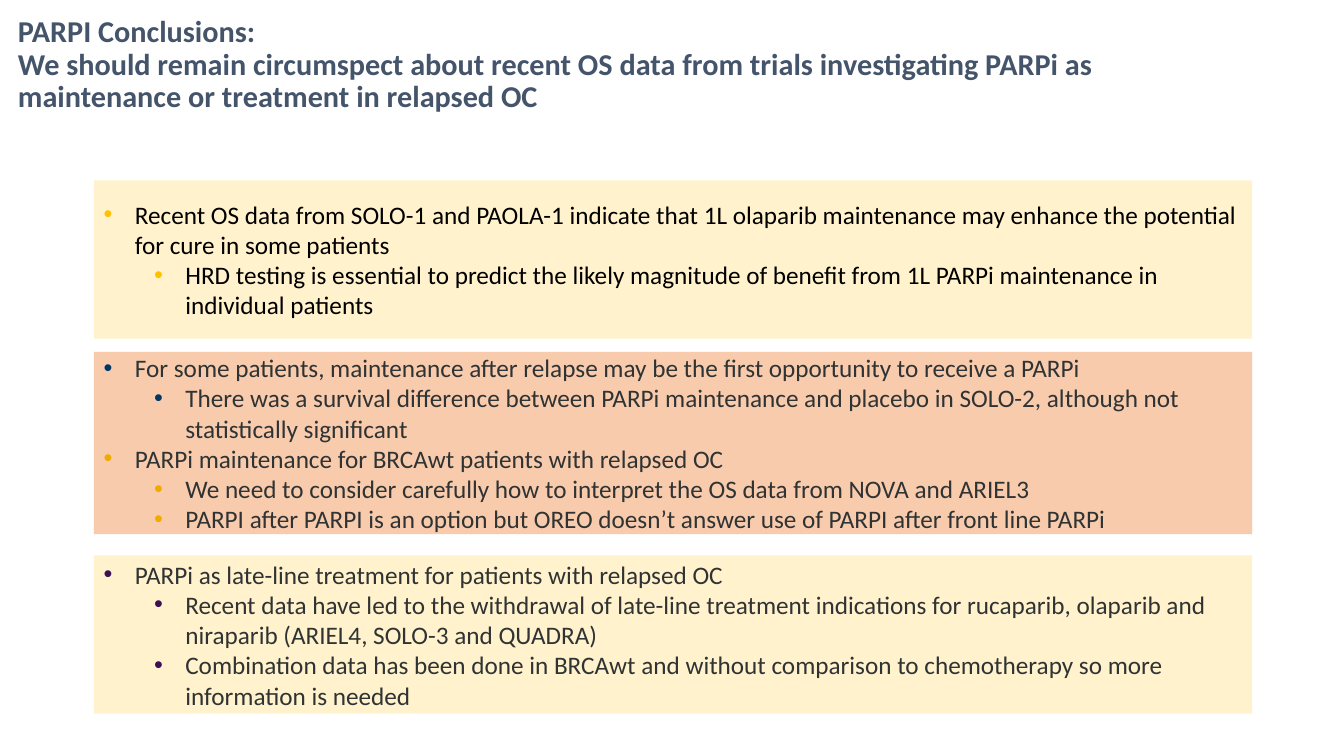
import lxml.etree
import pptx
import pptx.dml.color
import pptx.enum.shapes
import pptx.enum.text
import pptx.oxml.ns
import pptx.util
from pptx.util import Inches

TITLE = (
    "PARPI Conclusions:\v"
    "We should remain circumspect about recent OS data from trials investigating "
    "PARPi as maintenance or treatment in relapsed OC"
)

AMBER, PEACH = "FFC000", "F8CBAD"
NAVY, GOLD, PURPLE = "003865", "F0AB00", "3C1053"
BLACK, CHARCOAL, SLATE = "000000", "2F3333", "44546A"

# Each bullet is (level, bullet colour, text).
FIRST_LINE = [
    (0, AMBER, "Recent OS data from SOLO-1 and PAOLA-1 indicate that 1L olaparib "
               "maintenance may enhance the potential for cure in some patients"),
    (1, AMBER, "HRD testing is essential to predict the likely magnitude of benefit "
               "from 1L PARPi maintenance in individual patients"),
]
RELAPSE = [
    (0, NAVY, "For some patients, maintenance after relapse may be the first "
              "opportunity to receive a PARPi"),
    (1, NAVY, "There was a survival difference between PARPi maintenance and placebo "
              "in SOLO-2, although not statistically significant"),
    (0, GOLD, "PARPi maintenance for BRCAwt patients with relapsed OC"),
    (1, GOLD, "We need to consider carefully how to interpret the OS data from NOVA "
              "and ARIEL3"),
    (1, GOLD, "PARPI after PARPI is an option but OREO doesn’t answer use of PARPI "
              "after front line PARPi"),
]
LATE_LINE = [
    (0, PURPLE, "PARPi as late-line treatment for patients with relapsed OC"),
    (1, PURPLE, "Recent data have led to the withdrawal of late-line treatment "
                "indications for rucaparib, olaparib and niraparib "
                "(ARIEL4, SOLO-3 and QUADRA)"),
    (1, PURPLE, "Combination data has been done in BRCAwt and without comparison to "
                "chemotherapy so more information is needed"),
]


def rgb(value):
    return pptx.dml.color.RGBColor.from_string(value)


def add_child(parent, tag, **attributes):
    return lxml.etree.SubElement(parent, pptx.oxml.ns.qn(tag), attributes)


def write_text(para, text, size=18, color=CHARCOAL, bold=False, line_spacing=1.0):
    para.text = text
    para.alignment = pptx.enum.text.PP_ALIGN.LEFT
    para.line_spacing = line_spacing
    for span in para.runs:
        span.font.name = "Calibri"
        span.font.size = pptx.util.Pt(size)
        span.font.bold = bold
        span.font.color.rgb = rgb(color)


def set_bullet(para, level, color):
    """Give the paragraph a coloured dot with a hanging indent for its level."""
    para.level = level
    hanging = Inches(0.31)
    properties = para._p.get_or_add_pPr()
    properties.set("marL", str(hanging + level * Inches(0.5)))
    properties.set("indent", str(-hanging))
    add_child(add_child(properties, "a:buClr"), "a:srgbClr", val=color)
    add_child(properties, "a:buFont", typeface="Arial")
    add_child(properties, "a:buChar", char="•")


def prepare_frame(shape):
    frame = shape.text_frame
    frame.word_wrap = True
    frame.vertical_anchor = pptx.enum.text.MSO_ANCHOR.MIDDLE
    return frame


def add_title(page):
    box = page.shapes.add_textbox(Inches(0.08), Inches(0.06), Inches(11.5), Inches(1.18))
    write_text(prepare_frame(box).paragraphs[0], TITLE,
               size=21.6, color=SLATE, bold=True, line_spacing=0.9)


def add_panel(page, top, height, fill, bullets, opacity=100, text_color=CHARCOAL):
    panel = page.shapes.add_shape(
        pptx.enum.shapes.MSO_SHAPE.RECTANGLE,
        Inches(0.93), Inches(top), Inches(11.49), Inches(height))
    panel.shadow.inherit = False
    panel.line.fill.background()
    panel.fill.solid()
    panel.fill.fore_color.rgb = rgb(fill)
    if opacity < 100:
        fill_color = panel._element.spPr.find(
            pptx.oxml.ns.qn("a:solidFill") + "/" + pptx.oxml.ns.qn("a:srgbClr"))
        add_child(fill_color, "a:alpha", val=str(opacity * 1000))

    frame = prepare_frame(panel)
    for index, (level, bullet_color, text) in enumerate(bullets):
        para = frame.add_paragraph() if index else frame.paragraphs[0]
        write_text(para, text, color=text_color)
        set_bullet(para, level, bullet_color)


def main():
    deck = pptx.Presentation()
    deck.slide_width, deck.slide_height = Inches(13.33), Inches(7.5)
    page = deck.slides.add_slide(deck.slide_layouts[6])
    add_title(page)
    add_panel(page, 1.79, 1.57, AMBER, FIRST_LINE, opacity=20, text_color=BLACK)
    add_panel(page, 3.49, 1.81, PEACH, RELAPSE)
    add_panel(page, 5.51, 1.57, AMBER, LATE_LINE, opacity=20)
    deck.save("out.pptx")


if __name__ == "__main__":
    main()
